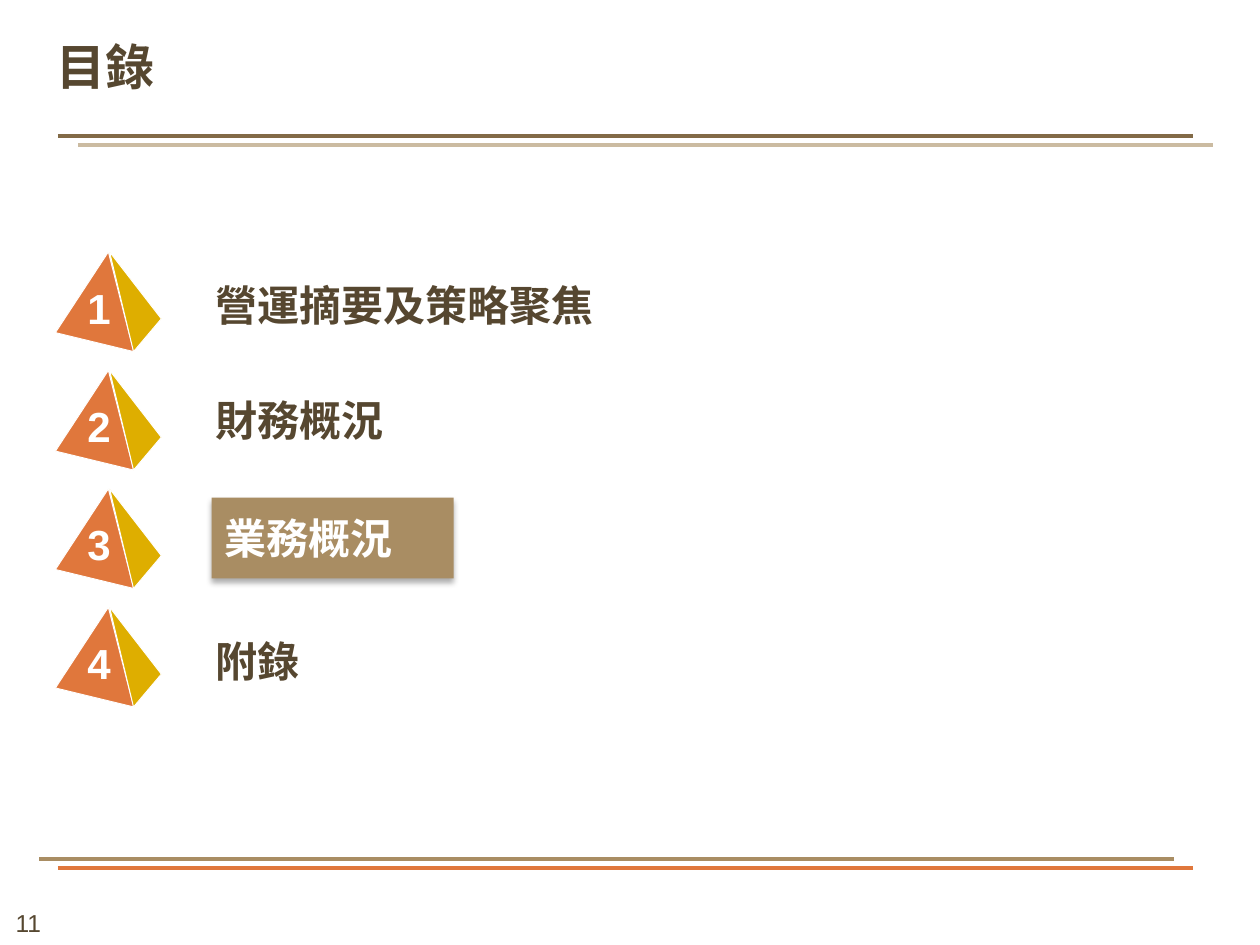
from lxml import etree
from pptx import Presentation
from pptx import util as u
from pptx.dml.color import RGBColor
from pptx.enum import shapes, text
from pptx.oxml import ns

COLORS = {
    "brown": "564730", "dark_rule": "826A47", "tan": "A98D63", "light_rule": "CBBBA1",
    "orange": "E0773C", "gold": "DEAE00", "white": "FFFFFF", "black": "000000",
}
CJK, LATIN = "Noto Sans CJK SC", "Arial"
TOP, STEP = 2, 0.94
RULES = [
    (0.46, 6.89, "orange"), (0.31, 6.82, "tan"),
    (0.62, 1.15, "light_rule"), (0.46, 1.08, "dark_rule"),
]
RULE_LENGTH = 9.01
FACES = [
    ("orange", [(0.86, 0), (0.44, 0.64), (1.06, 0.79)]),
    ("gold", [(0.87, 0), (1.28, 0.53), (1.06, 0.79)]),
]
AGENDA = [
    ("營運摘要及策略聚焦", (1.61, 2.08, 3.31, 0.68), False),
    ("財務概況", (1.61, 3.01, 2.42, 0.64), False),
    ("業務概況", (1.68, 3.95, 1.92, 0.64), True),
    ("附錄", (1.61, 4.92, 2.42, 0.64), False),
]


def rgb(name):
    """Return the named colour."""
    return RGBColor.from_string(COLORS[name])


def inches(values):
    """Convert numbers to lengths."""
    return [u.Inches(v) for v in values]


def set_text(sp, words, size, color, font=CJK, bold=True, align=text.PP_ALIGN.LEFT,
             anchor=text.MSO_ANCHOR.MIDDLE, margin=None, spacing=None, wrap=True):
    """Write one formatted paragraph into a shape."""
    tf = sp.text_frame
    tf.text = words
    tf.word_wrap = wrap
    tf.vertical_anchor = anchor
    if margin is not None:
        tf.margin_left = tf.margin_right = tf.margin_top = tf.margin_bottom = margin
    p = tf.paragraphs[0]
    p.alignment = align
    if spacing is not None:
        p.line_spacing = spacing
    r = p.runs[0]
    r.font.size, r.font.bold, r.font.name = u.Pt(size), bold, font
    r.font.color.rgb = rgb(color)
    etree.SubElement(r.font._element, ns.qn("a:ea"), typeface=font)


def add_rule(s, x, y, color):
    """Draw a horizontal rule of the common length."""
    c = s.shapes.add_connector(
        shapes.MSO_CONNECTOR.STRAIGHT, *inches((x, y, x + RULE_LENGTH, y)))
    c.line.color.rgb = rgb(color)
    c.line.width = u.Pt(2.25)
    etree.SubElement(c._element.spPr, ns.qn("a:effectLst"))


def add_pyramid(s, number, top):
    """Draw a numbered two-faced pyramid as a group."""
    group = s.shapes.add_group_shape()
    for color, points in FACES:
        corners = [inches((x, top + y)) for x, y in points]
        builder = group.shapes.build_freeform(*corners[0])
        builder.add_line_segments(corners[1:], close=True)
        sp = builder.convert_to_shape()
        sp.shadow.inherit = False
        sp.fill.solid()
        sp.fill.fore_color.rgb = rgb(color)
        sp.line.color.rgb = rgb("white")
        sp.line.width = u.Pt(0.5)
    label = group.shapes.add_textbox(*inches((0.69, top + 0.3, 0.19, 0.34)))
    set_text(label, str(number), 24, "white", LATIN, align=text.PP_ALIGN.CENTER,
             margin=0, spacing=0.85, wrap=False)


def add_soft_shadow(sp):
    """Give a shape a soft shadow straight below it."""
    sp.shadow.inherit = False
    effects = sp._element.spPr.find(ns.qn("a:effectLst"))
    shadow = etree.SubElement(
        effects, ns.qn("a:outerShdw"), blurRad=str(u.Pt(3.5)), dist=str(u.Pt(2.2)),
        dir="5400000", rotWithShape="0")
    color = etree.SubElement(shadow, ns.qn("a:srgbClr"), val=COLORS["black"])
    etree.SubElement(color, ns.qn("a:alpha"), val="32000")


def add_agenda_item(s, words, box, current):
    """Add an agenda entry, highlighted when it is the current one."""
    if current:
        sp = s.shapes.add_shape(shapes.MSO_SHAPE.RECTANGLE, *inches(box))
        sp.fill.solid()
        sp.fill.fore_color.rgb = rgb("tan")
        sp.line.fill.background()
        add_soft_shadow(sp)
    else:
        sp = s.shapes.add_textbox(*inches(box))
    set_text(sp, words, 24, "white" if current else "brown")


def main():
    """Build the agenda slide."""
    prs = Presentation()
    prs.slide_width, prs.slide_height = inches((10, 7.5))
    s = prs.slides.add_slide(prs.slide_layouts[6])
    page = s.shapes.add_textbox(*inches((-0.17, 7.16, 0.79, 0.34)))
    set_text(page, "11", 14, "brown", LATIN, bold=False, align=text.PP_ALIGN.CENTER,
             anchor=text.MSO_ANCHOR.TOP)
    for rule in RULES:
        add_rule(s, *rule)
    title = s.shapes.add_textbox(*inches((0.45, 0.25, 9.41, 0.51)))
    set_text(title, "目錄", 28, "brown", anchor=text.MSO_ANCHOR.BOTTOM, margin=0,
             spacing=u.Pt(40))
    for i, item in enumerate(AGENDA):
        add_pyramid(s, i + 1, TOP + i * STEP)
        add_agenda_item(s, *item)
    prs.save("out.pptx")


if __name__ == "__main__":
    main()
